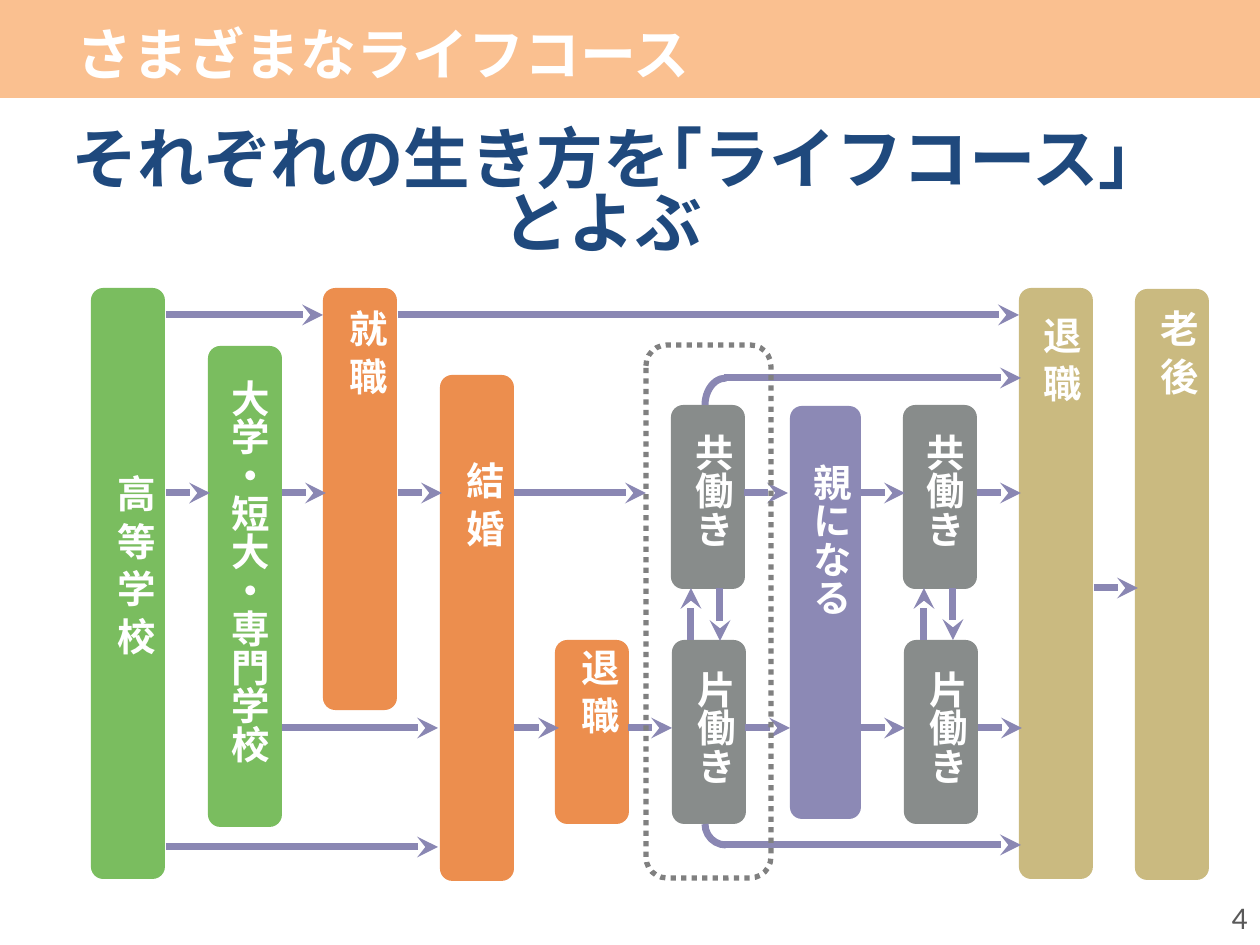
from lxml import etree
from pptx import Presentation
from pptx.dml.color import RGBColor
from pptx.enum import dml, shapes, text
from pptx.oxml.ns import qn
from pptx.util import Emu, Pt

PX = 914400 // 126
JAPANESE = "Noto Sans CJK JP"
COLOURS = {
    "banner": "FAC090", "heading": "1F497D", "white": "FFFFFF", "number": "595959",
    "school": "7ABD5F", "work": "EC8E4E", "couple": "888C8B", "parent": "8C89B5",
    "later": "CABA80", "arrow": "8A87B3", "frame": "808080",
}
BAR_WIDTH = 74
LABEL_WIDTH = 72

# Stages: left, top, height, colour, label, label right, label top, label height
STAGES = [
    (208, 346, 481, "school", "大学・短大・専門学校", 279, 367, 432),
    (91, 288, 591, "school", "高 等 学 校", 165, 462, 243),
    (323, 288, 422, "work", "就 職", 397, 297, 401),
    (440, 375, 506, "work", "結 婚", 514, 449, 329),
    (555, 640, 184, "work", "退 職", 629, 636, 173),
    (671, 405, 184, "couple", "共働き", 743, 421, 146),
    (672, 640, 184, "couple", "片働き", 745, 658, 146),
    (903, 405, 184, "couple", "共働き", 974, 421, 146),
    (904, 640, 184, "couple", "片働き", 977, 658, 146),
    (790, 406, 413, "parent", "親になる", 861, 451, 295),
    (1019, 288, 591, "later", "退 職", 1091, 304, 563),
    (1135, 289, 591, "later", "老 後", 1208, 297, 572),
]
# Horizontal arrows by height: (start, end)
ACROSS = {
    315: [(166, 323), (398, 1019)],
    378: [(724, 1021)],
    493: [(166, 210), (282, 326), (398, 442), (514, 646), (744, 788),
          (861, 905), (977, 1021)],
    588: [(1094, 1138)],
    728: [(282, 438), (514, 559), (628, 672), (745, 790), (861, 905), (978, 1022)],
    845: [(724, 1021)],
    847: [(166, 438)],
}
# Vertical arrows by x: (start, end)
UPRIGHT = {691: (640, 588), 720: (588, 641), 924: (640, 588), 953: (588, 640)}
# Bends: left, top, width, height, start angle, end angle
BENDS = [(705, 803, 42, 42, 90, 180), (705, 378, 42, 54, 180, 270)]


def colour(name):
    return RGBColor.from_string(COLOURS[name])


def px(*lengths):
    return [Emu(length * PX) for length in lengths]


def apply(target, values):
    for name, value in values.items():
        setattr(target, name, value)


def add_block(page, kind, area, fill=None):
    block = page.shapes.add_shape(kind, *px(*area))
    block.shadow.inherit = False
    block.line.fill.background()
    if fill:
        block.fill.solid()
        block.fill.fore_color.rgb = colour(fill)
    else:
        block.fill.background()
    return block


def add_text(page, words, area, size, fill, frame=None, para=None,
             font=JAPANESE, bold=True, upright=False):
    box = page.shapes.add_textbox(*px(*area))
    apply(box.text_frame, {"word_wrap": True, **(frame or {})})
    if upright:
        box.text_frame._txBody.bodyPr.set("vert", "eaVert")
    paragraph = box.text_frame.paragraphs[0]
    apply(paragraph, para or {})
    span = paragraph.add_run()
    span.text = words
    apply(span.font, {"size": Pt(size), "bold": bold, "name": font})
    span.font.color.rgb = colour(fill)
    east_asian = etree.SubElement(span._r.get_or_add_rPr(), qn("a:ea"))
    east_asian.set("typeface", font)


def add_stage(page, left, top, height, fill, label, right, label_top, label_height):
    width = 71 if fill == "parent" else BAR_WIDTH
    add_block(page, shapes.MSO_SHAPE.ROUNDED_RECTANGLE, (left, top, width, height), fill)
    area = (right - LABEL_WIDTH, label_top, LABEL_WIDTH, label_height)
    add_text(page, label, area, 22, "white", upright=True)


def style_line(line, fill, width):
    line.color.rgb = colour(fill)
    line.width = Pt(width)


def add_arrow(page, *ends):
    arrow = page.shapes.add_connector(shapes.MSO_CONNECTOR.STRAIGHT, *px(*ends))
    style_line(arrow.line, "arrow", 4)
    etree.SubElement(arrow.line._get_or_add_ln(), qn("a:tailEnd")).set("type", "stealth")
    etree.SubElement(arrow._element.spPr, qn("a:effectLst"))


def add_bend(page, left, top, width, height, start, end):
    bend = add_block(page, shapes.MSO_SHAPE.ARC, (left, top, width, height))
    style_line(bend.line, "arrow", 4)
    for index, angle in enumerate((start, end)):
        # An adjustment of 1.0 is 100000 units; a degree is 60000 units
        bend.adjustments[index] = angle * 0.6


def main():
    deck = Presentation()
    deck.slide_width, deck.slide_height = px(1260, 945)
    page = deck.slides.add_slide(deck.slide_layouts[6])

    # Banner, heading and page number
    middle = {"vertical_anchor": text.MSO_ANCHOR.MIDDLE}
    add_block(page, shapes.MSO_SHAPE.RECTANGLE, (0, 0, 1260, 98), "banner")
    add_text(page, "さまざまなライフコース", (64, 4, 916, 99), 32, "white", middle)
    add_text(page, "それぞれの生き方を｢ライフコース｣とよぶ", (32, 126, 1140, 94), 38,
             "heading", para={"alignment": text.PP_ALIGN.CENTER, "line_spacing": 0.8})
    add_text(page, "4", (966, 892, 294, 50), 18, "number", middle,
             {"alignment": text.PP_ALIGN.RIGHT}, "Calibri", False)

    # Life stages
    for stage in STAGES:
        add_stage(page, *stage)

    # Paths between the stages
    for y, spans in ACROSS.items():
        for start, end in spans:
            add_arrow(page, start, y, end, y)
    for x, (start, end) in UPRIGHT.items():
        add_arrow(page, x, start, x, end)
    for bend in BENDS:
        add_bend(page, *bend)

    # Dotted frame around the married couple's choices
    frame = add_block(page, shapes.MSO_SHAPE.ROUNDED_RECTANGLE, (646, 345, 125, 533))
    style_line(frame.line, "frame", 3)
    frame.line.dash_style = dml.MSO_LINE.ROUND_DOT

    deck.save("out.pptx")


if __name__ == "__main__":
    main()
